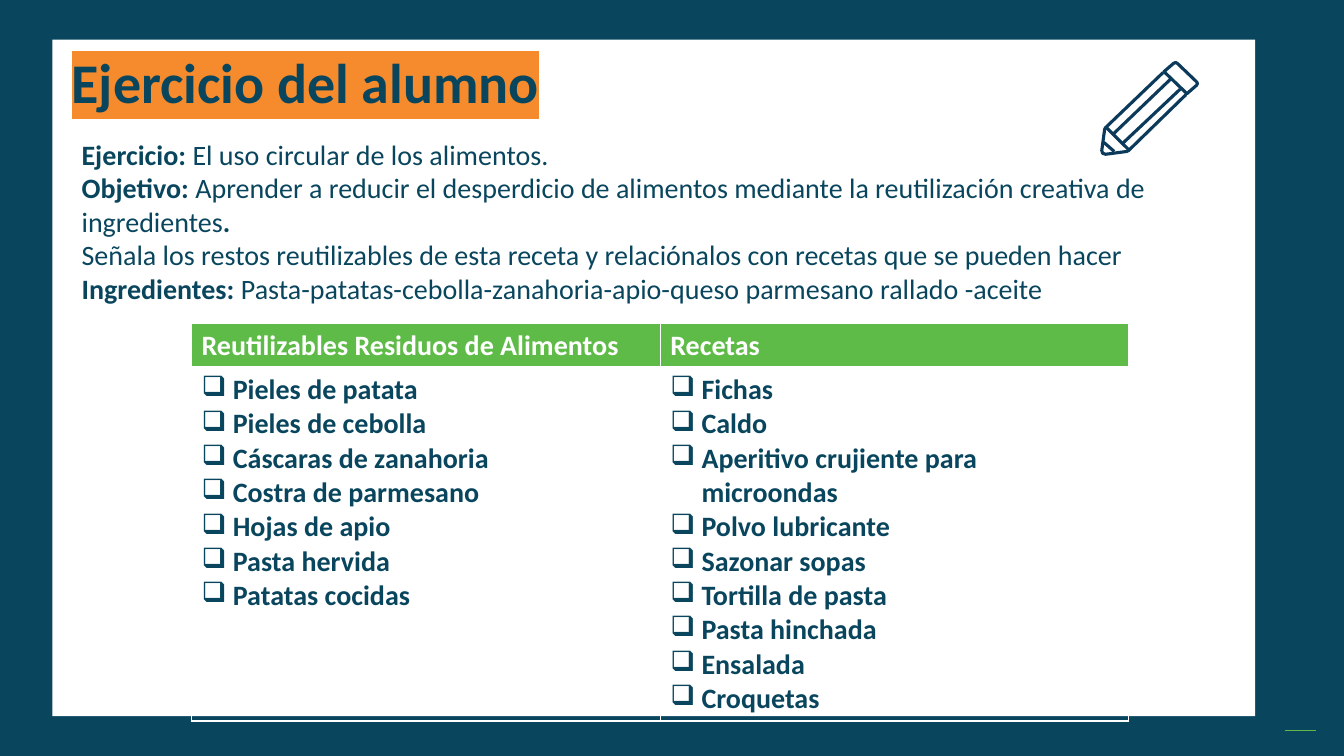
"""Build the student exercise slide on the circular use of food."""
from dataclasses import dataclass

from lxml.etree import SubElement
from pptx import Presentation
from pptx.dml.color import RGBColor
from pptx.enum.shapes import MSO_CONNECTOR, MSO_SHAPE
from pptx.enum.text import MSO_ANCHOR, MSO_AUTO_SIZE, PP_ALIGN
from pptx.oxml.ns import qn
from pptx.util import Inches, Pt

WIDTH, HEIGHT = Inches(13.333), Inches(7.5)


@dataclass(frozen=True)
class Theme:
    navy: str = "09465E"
    ink: str = "0B3A5B"
    white: str = "FFFFFF"
    orange: str = "F68B2D"
    green: str = "5FBB47"
    accent: str = "60BA47"
    font: str = "Calibri"
    title_size: int = 40
    text_size: int = 20
    hairline: float = 1
    header_rule: float = 3
    pencil_stroke: float = 2.25


@dataclass(frozen=True)
class Area:
    """Percentages of the slide's width and height."""
    left: float
    top: float
    width: float
    height: float

    def point(self, across: float, down: float) -> tuple[int, int]:
        return (round(WIDTH * (self.left + self.width * across / 100) / 100),
                round(HEIGHT * (self.top + self.height * down / 100) / 100))

    def bounds(self) -> tuple[int, int, int, int]:
        left, top = self.point(0, 0)
        right, bottom = self.point(100, 100)
        return left, top, right - left, bottom - top


@dataclass(frozen=True)
class Panel:
    area: Area
    color: str


@dataclass(frozen=True)
class Stroke:
    start: tuple[float, float]
    end: tuple[float, float]


@dataclass(frozen=True)
class Outline:
    points: list[tuple[float, float]]
    closed: bool


@dataclass(frozen=True)
class Phrase:
    text: str
    bold: bool = False


@dataclass(frozen=True)
class Checklist:
    heading: str
    entries: list[str]


THEME = Theme()
SLIDE_AREA = Area(0, 0, 100, 100)
TITLE_AREA = Area(4.58, 6.67, 82.4, 11.7)
INTRO_AREA = Area(5.32, 17.47, 87.3, 27.87)
TABLE_AREA = Area(14.25, 42.8, 69.75, 51.6)
PENCIL_AREA = Area(81.98, 8.27, 7.12, 12.13)
HEADER_SHARE = 5.47
CHECKBOX_INDENT = Inches(0.31)

PANELS = [Panel(SLIDE_AREA, THEME.navy), Panel(Area(3.9, 5.25, 89.5, 89.5), THEME.white)]
CORNER_ACCENT = Stroke((95.62, 96.67), (97.95, 96.67))
PENCIL_OUTLINES = [
    Outline([(99, 21), (79, 1), (77, 0), (75, 1), (65, 10), (89, 34), (99, 25), (100, 23)], True),
    Outline([(64, 11), (4, 71), (3, 73), (0, 96), (1, 99), (4, 100), (26, 97), (28, 96),
             (88, 35)], False),
]
PENCIL_STROKES = [
    Stroke((82, 29), (22, 88)),
    Stroke((12, 78), (72, 18)),
    Stroke((13, 97), (2, 87)),
    Stroke((5, 71), (28, 95)),
]
INTRO = [
    [Phrase("Ejercicio: ", True), Phrase("El uso circular de los alimentos.")],
    [Phrase("Objetivo: ", True),
     Phrase("Aprender a reducir el desperdicio de alimentos mediante la reutilización "
            "creativa de ingredientes"), Phrase(".", True)],
    [Phrase("Señala los restos reutilizables de esta receta y relaciónalos con recetas "
            "que se pueden hacer")],
    [Phrase("Ingredientes: ", True),
     Phrase("Pasta-patatas-cebolla-zanahoria-apio-queso parmesano rallado -aceite")],
]
CHECKLISTS = [
    Checklist("Reutilizables Residuos de Alimentos", [
        "Pieles de patata", "Pieles de cebolla", "Cáscaras de zanahoria",
        "Costra de parmesano", "Hojas de apio", "Pasta hervida", "Patatas cocidas"]),
    Checklist("Recetas", [
        "Fichas", "Caldo", "Aperitivo crujiente para microondas", "Polvo lubricante",
        "Sazonar sopas", "Tortilla de pasta", "Pasta hinchada", "Ensalada", "Croquetas"]),
]


def rgb(color: str) -> RGBColor:
    return RGBColor.from_string(color)


def style_run(run, color: str, size: int = THEME.text_size, bold: bool = True) -> None:
    run.font.size, run.font.bold, run.font.name = Pt(size), bold, THEME.font
    run.font.color.rgb = rgb(color)


def set_bullet(paragraph, symbol: str = "", indent: int = 0) -> None:
    properties = paragraph._p.get_or_add_pPr()
    properties.set("marL", str(indent))
    properties.set("indent", str(-indent))
    if symbol:
        SubElement(properties, qn("a:buChar")).set("char", symbol)
    else:
        SubElement(properties, qn("a:buNone"))


def place(placeholder, area: Area):
    placeholder.left, placeholder.top, placeholder.width, placeholder.height = area.bounds()
    frame = placeholder.text_frame
    frame.word_wrap, frame.auto_size = True, MSO_AUTO_SIZE.NONE
    frame.vertical_anchor = MSO_ANCHOR.TOP
    return frame


def draw_panel(slide, panel: Panel, depth: int) -> None:
    backdrop = slide.shapes.add_shape(MSO_SHAPE.RECTANGLE, *panel.area.bounds())
    backdrop.shadow.inherit = False
    backdrop.fill.solid()
    backdrop.fill.fore_color.rgb = rgb(panel.color)
    backdrop.line.fill.background()
    slide.shapes._spTree.insert(2 + depth, backdrop._element)


def draw_stroke(slide, stroke: Stroke, area: Area, color: str, weight: float) -> None:
    segment = slide.shapes.add_connector(
        MSO_CONNECTOR.STRAIGHT, *area.point(*stroke.start), *area.point(*stroke.end))
    segment.line.color.rgb, segment.line.width = rgb(color), Pt(weight)
    SubElement(segment._element.spPr, qn("a:effectLst"))


def draw_outline(slide, outline: Outline, area: Area) -> None:
    start, *corners = [area.point(*point) for point in outline.points]
    builder = slide.shapes.build_freeform(*start)
    builder.add_line_segments(corners, close=outline.closed)
    contour = builder.convert_to_shape()
    contour.shadow.inherit = False
    contour.fill.background()
    contour.line.color.rgb, contour.line.width = rgb(THEME.ink), Pt(THEME.pencil_stroke)


def write_title(slide) -> None:
    heading = place(slide.shapes.title, TITLE_AREA).paragraphs[0]
    heading.text = "Ejercicio del alumno"
    heading.alignment, heading.line_spacing = PP_ALIGN.LEFT, 0.9
    run = heading.runs[0]
    style_run(run, THEME.navy, THEME.title_size)
    highlight = SubElement(run._r.rPr, qn("a:highlight"))
    SubElement(highlight, qn("a:srgbClr")).set("val", THEME.orange)
    run._r.rPr.find(qn("a:solidFill")).addnext(highlight)


def write_intro(slide) -> None:
    frame = place(slide.placeholders[1], INTRO_AREA)
    for index, phrases in enumerate(INTRO):
        paragraph = frame.add_paragraph() if index else frame.paragraphs[0]
        set_bullet(paragraph)
        paragraph.space_before, paragraph.line_spacing = Pt(0), 1.0
        for phrase in phrases:
            run = paragraph.add_run()
            run.text = phrase.text
            style_run(run, THEME.navy, bold=phrase.bold)


def set_borders(cell, bottom: float) -> None:
    properties = cell._tc.get_or_add_tcPr()
    weights = {"a:lnL": THEME.hairline, "a:lnR": THEME.hairline,
               "a:lnT": THEME.hairline, "a:lnB": bottom}
    for position, (side, weight) in enumerate(weights.items()):
        border = SubElement(properties, qn(side))
        border.set("w", str(Pt(weight)))
        fill = SubElement(border, qn("a:solidFill"))
        SubElement(fill, qn("a:srgbClr")).set("val", THEME.white)
        properties.insert(position, border)


def draw_table(slide) -> None:
    table = slide.shapes.add_table(2, len(CHECKLISTS), *TABLE_AREA.bounds()).table
    table.horz_banding = False
    table.rows[0].height = round(HEIGHT * HEADER_SHARE / 100)
    table.rows[1].height = round(HEIGHT * (TABLE_AREA.height - HEADER_SHARE) / 100)
    for column, checklist in enumerate(CHECKLISTS):
        header, body = table.cell(0, column), table.cell(1, column)
        header.text_frame.text = checklist.heading
        style_run(header.text_frame.paragraphs[0].runs[0], THEME.white)
        header.fill.solid()
        header.fill.fore_color.rgb = rgb(THEME.green)
        set_borders(header, THEME.header_rule)
        body.text_frame.text = "\n".join(checklist.entries)
        for entry in body.text_frame.paragraphs:
            set_bullet(entry, "❑", CHECKBOX_INDENT)
            style_run(entry.runs[0], THEME.navy)
        body.fill.background()
        set_borders(body, THEME.hairline)


def main() -> None:
    deck = Presentation()
    deck.slide_width, deck.slide_height = WIDTH, HEIGHT
    slide = deck.slides.add_slide(deck.slide_layouts[1])
    for depth, panel in enumerate(PANELS):
        draw_panel(slide, panel, depth)
    draw_stroke(slide, CORNER_ACCENT, SLIDE_AREA, THEME.accent, THEME.hairline)
    write_title(slide)
    write_intro(slide)
    draw_table(slide)
    for outline in PENCIL_OUTLINES:
        draw_outline(slide, outline, PENCIL_AREA)
    for stroke in PENCIL_STROKES:
        draw_stroke(slide, stroke, PENCIL_AREA, THEME.ink, THEME.pencil_stroke)
    deck.save("out.pptx")


if __name__ == "__main__":
    main()
